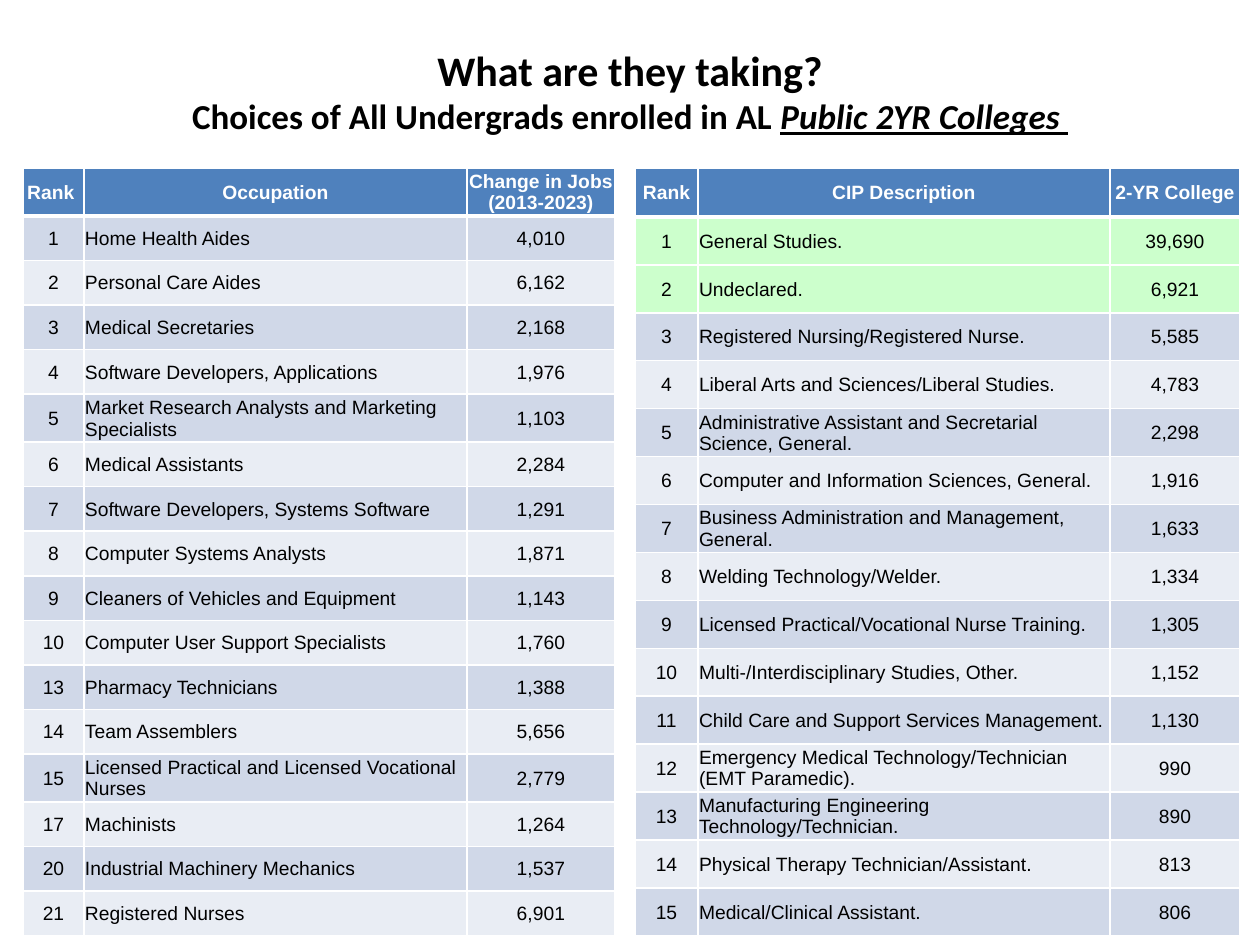
from dataclasses import dataclass

from lxml import etree
from pptx import Presentation
from pptx.dml.color import RGBColor
from pptx.enum import text
from pptx.oxml import ns
from pptx.util import Emu, Pt

SCALE = 914400 / 126
WHITE = RGBColor(0xFF, 0xFF, 0xFF)
BLACK = RGBColor(0x00, 0x00, 0x00)
HEADER_BLUE = RGBColor(0x4F, 0x81, 0xBD)
HIGHLIGHT_GREEN = RGBColor(0xCC, 0xFF, 0xCC)
BANDS = (RGBColor(0xD0, 0xD8, 0xE8), RGBColor(0xE9, 0xED, 0xF4))
TABLE_TOP = 168
TABLE_HEIGHT = 768


@dataclass
class RankTable:
    left: int
    widths: tuple[int, ...]
    rows: list[tuple[str, str, str]]
    tall_rows: dict[int, int]
    highlighted: tuple[int, ...] = ()


@dataclass
class TitleRun:
    words: str
    size: int
    emphasis: bool = False


TITLE_LINES = [
    [TitleRun("What are they taking?", 24)],
    [
        TitleRun("Choices of All Undergrads enrolled in AL ", 20),
        TitleRun("Public 2YR Colleges ", 20, True),
    ],
]

OCCUPATIONS = RankTable(
    left=23,
    widths=(61, 383, 148),
    tall_rows={0: 48, 5: 48, 13: 48},
    rows=[
        ("Rank ", "Occupation", "Change in Jobs (2013-2023)"),
        ("1", "Home Health Aides", "4,010"),
        ("2", "Personal Care Aides", "6,162"),
        ("3", "Medical Secretaries", "2,168"),
        ("4", "Software Developers, Applications", "1,976"),
        ("5", "Market Research Analysts and Marketing Specialists", "1,103"),
        ("6", "Medical Assistants", "2,284"),
        ("7", "Software Developers, Systems Software", "1,291"),
        ("8", "Computer Systems Analysts", "1,871"),
        ("9", "Cleaners of Vehicles and Equipment", "1,143"),
        ("10", "Computer User Support Specialists", "1,760"),
        ("13", "Pharmacy Technicians", "1,388"),
        ("14", "Team Assemblers", "5,656"),
        ("15", "Licensed Practical and Licensed Vocational Nurses", "2,779"),
        ("17", "Machinists", "1,264"),
        ("20", "Industrial Machinery Mechanics", "1,537"),
        ("21", "Registered Nurses", "6,901"),
    ],
)

PROGRAMS = RankTable(
    left=635,
    widths=(63, 412, 130),
    tall_rows={0: 49},
    highlighted=(1, 2),
    rows=[
        ("Rank", "CIP Description", "2-YR College"),
        ("1", "General Studies.", "39,690"),
        ("2", "Undeclared.", "6,921"),
        ("3", "Registered Nursing/Registered Nurse.", "5,585"),
        ("4", "Liberal Arts and Sciences/Liberal Studies.", "4,783"),
        ("5", "Administrative Assistant and Secretarial Science, General.", "2,298"),
        ("6", "Computer and Information Sciences, General.", "1,916"),
        ("7", "Business Administration and Management, General.", "1,633"),
        ("8", "Welding Technology/Welder.", "1,334"),
        ("9", "Licensed Practical/Vocational Nurse Training.", "1,305"),
        ("10", "Multi-/Interdisciplinary Studies, Other.", "1,152"),
        ("11", "Child Care and Support Services Management.", "1,130"),
        ("12", "Emergency Medical Technology/Technician (EMT Paramedic).", "990"),
        ("13", "Manufacturing Engineering Technology/Technician.", "890"),
        ("14", "Physical Therapy Technician/Assistant.", "813"),
        ("15", "Medical/Clinical Assistant.", "806"),
    ],
)


def px(length: float) -> Emu:
    return Emu(round(length * SCALE))


def draw_title(slide) -> None:
    title = slide.shapes.title
    title.left, title.top, title.width, title.height = px(63), px(38), px(1134), px(130)
    frame = title.text_frame
    frame.word_wrap = True
    frame.auto_size = text.MSO_AUTO_SIZE.NONE
    frame.vertical_anchor = text.MSO_ANCHOR.TOP
    paragraph = frame.paragraphs[0]
    paragraph.alignment = text.PP_ALIGN.CENTER
    for number, line in enumerate(TITLE_LINES):
        if number:
            paragraph.add_line_break()
            line_break = paragraph._p.findall(ns.qn("a:br"))[-1]
            size = TITLE_LINES[number - 1][-1].size
            etree.SubElement(line_break, ns.qn("a:rPr"), sz=str(size * 100))
        for part in line:
            run = paragraph.add_run()
            run.text = part.words
            run.font.name = "Calibri"
            run.font.size = Pt(part.size)
            run.font.bold = True
            run.font.color.rgb = BLACK
            if part.emphasis:
                run.font.italic = True
                run.font.underline = True


def add_borders(cell, row: int) -> None:
    properties = cell._tc.get_or_add_tcPr()
    for side in ("lnL", "lnR", "lnT", "lnB"):
        heavy = (row, side) in ((0, "lnB"), (1, "lnT"))
        line = etree.SubElement(properties, ns.qn(f"a:{side}"), w=str(Pt(3 if heavy else 1)))
        fill = etree.SubElement(line, ns.qn("a:solidFill"))
        etree.SubElement(fill, ns.qn("a:srgbClr"), val=str(WHITE))


def fill_color(table: RankTable, row: int) -> RGBColor:
    if row == 0:
        return HEADER_BLUE
    if row in table.highlighted:
        return HIGHLIGHT_GREEN
    return BANDS[(row - 1) % 2]


def write_cell(cell, words: str, row: int, column: int, color: RGBColor) -> None:
    is_header = row == 0
    add_borders(cell, row)
    cell.fill.solid()
    cell.fill.fore_color.rgb = color
    cell.margin_left = cell.margin_right = cell.margin_top = px(1)
    cell.margin_bottom = 0
    cell.vertical_anchor = text.MSO_ANCHOR.MIDDLE
    paragraph = cell.text_frame.paragraphs[0]
    centered = is_header or column != 1
    paragraph.alignment = text.PP_ALIGN.CENTER if centered else text.PP_ALIGN.LEFT
    run = paragraph.add_run()
    run.text = words
    run.font.name = "Arial"
    run.font.size = Pt(11)
    run.font.bold = is_header
    run.font.color.rgb = WHITE if is_header else BLACK


def draw_table(slide, data: RankTable) -> None:
    count = len(data.rows)
    frame = slide.shapes.add_table(
        count, len(data.widths), px(data.left), px(TABLE_TOP), px(sum(data.widths)), px(TABLE_HEIGHT)
    )
    table = frame.table
    for column, width in zip(table.columns, data.widths):
        column.width = px(width)
    regular = (TABLE_HEIGHT - sum(data.tall_rows.values())) / (count - len(data.tall_rows))
    for row, values in enumerate(data.rows):
        table.rows[row].height = px(data.tall_rows.get(row, regular))
        color = fill_color(data, row)
        for column, words in enumerate(values):
            write_cell(table.cell(row, column), words, row, column, color)


def main() -> None:
    presentation = Presentation()
    presentation.slide_width, presentation.slide_height = px(1260), px(945)
    slide = presentation.slides.add_slide(presentation.slide_layouts[5])
    draw_title(slide)
    for table in (OCCUPATIONS, PROGRAMS):
        draw_table(slide, table)
    presentation.save("out.pptx")


if __name__ == "__main__":
    main()
